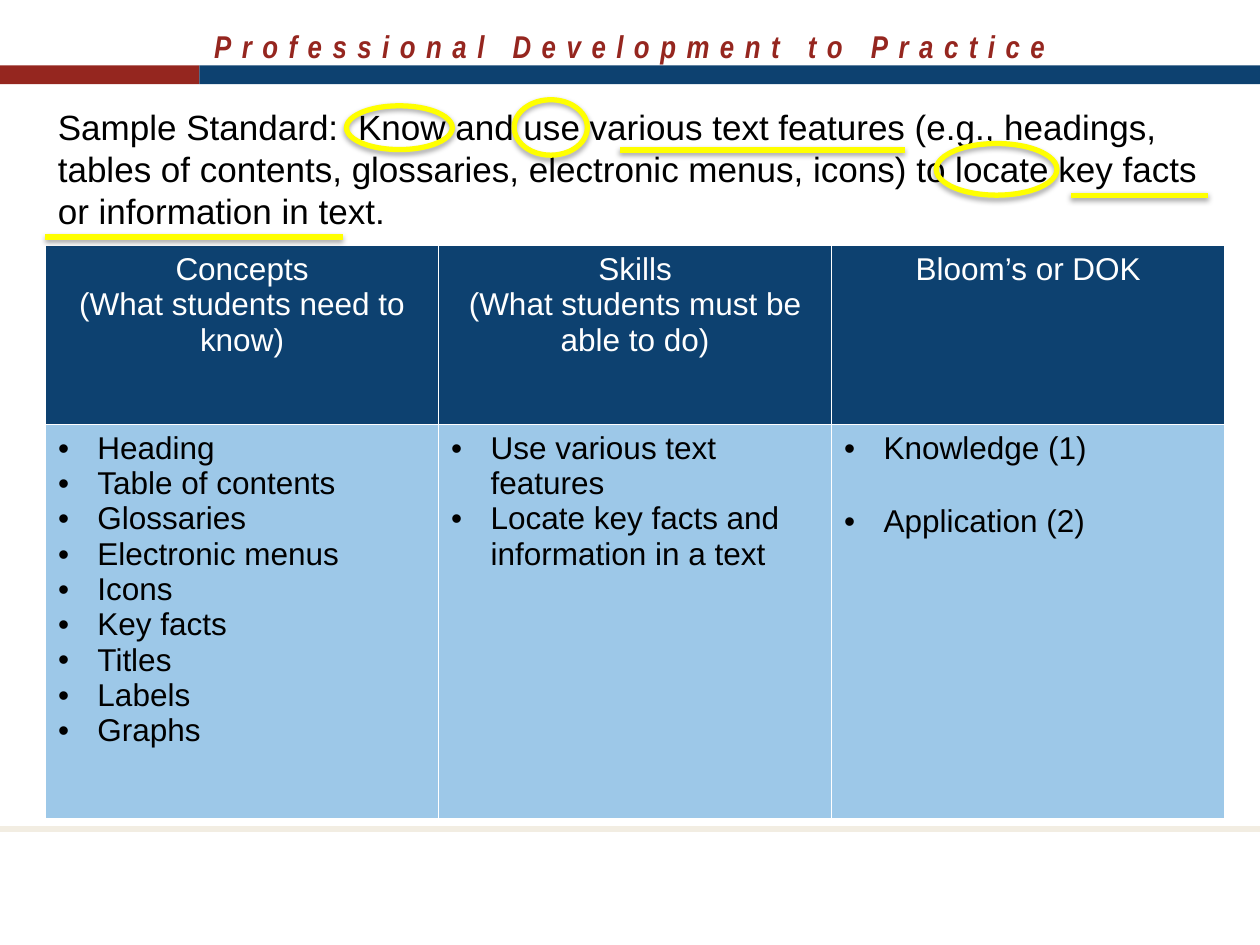
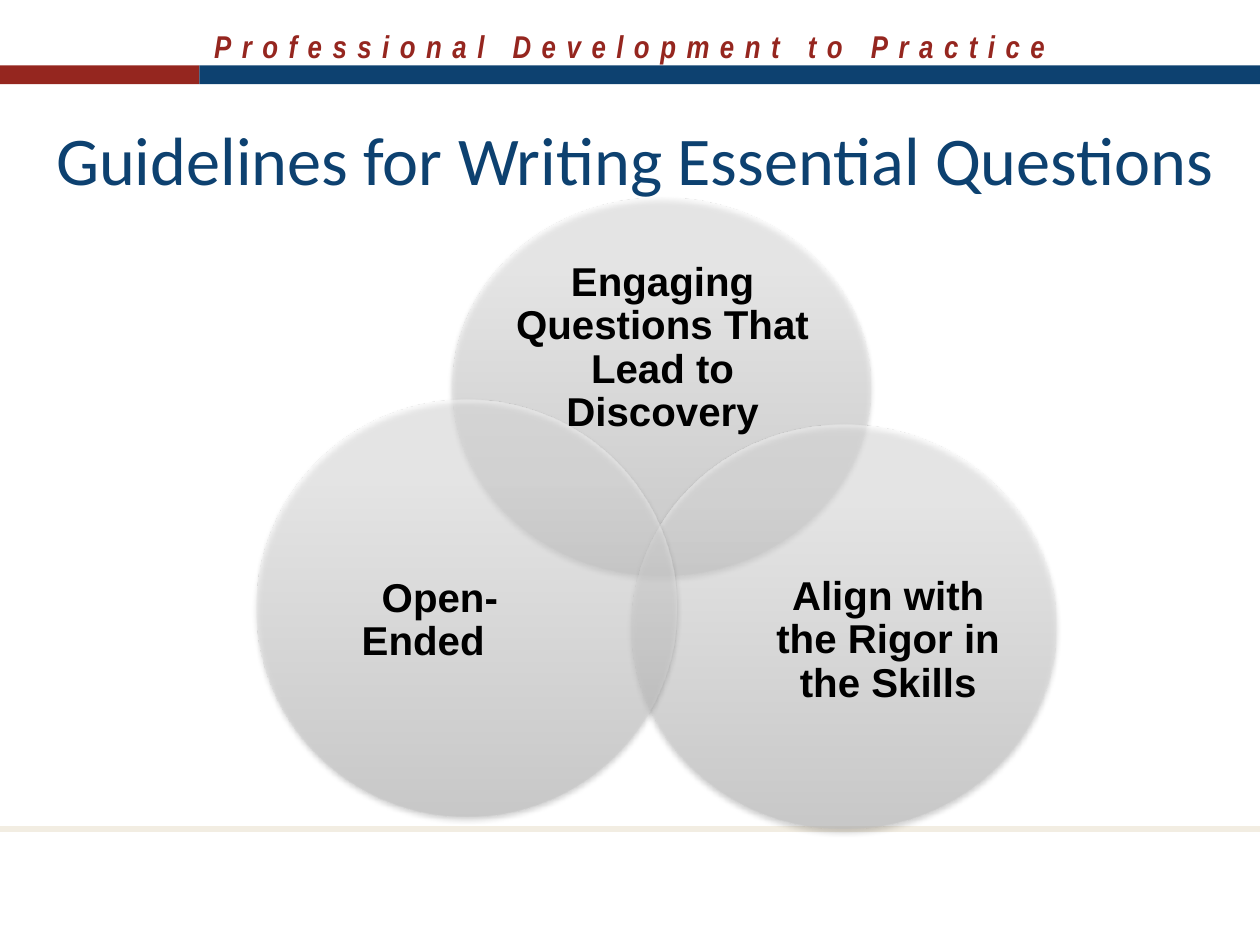
from dataclasses import dataclass
from typing import Any, NamedTuple

from lxml.etree import SubElement
from pptx import Presentation
from pptx.dml.color import RGBColor as Rgb
from pptx.enum.shapes import MSO_CONNECTOR as Link, MSO_SHAPE as Kind
from pptx.enum.text import MSO_ANCHOR as Anchor, MSO_AUTO_SIZE as Fit, PP_ALIGN as Align
from pptx.oxml.ns import qn
from pptx.util import Pt


@dataclass(frozen=True)
class Theme:
    red: str = "95261F"
    navy: str = "0D4170"
    sky: str = "9DC8E8"
    sand: str = "F2EDE2"
    mark: str = "FFFF00"
    white: str = "FFFFFF"
    black: str = "000000"
    sans: str = "Arial"
    narrow: str = "Arial Narrow"
    head: str = "Calibri"
    small: float = 18
    body: float = 20
    label: float = 23
    title: float = 39
    rule: float = 3


class Box(NamedTuple):
    left: float
    top: float
    width: float
    height: float

    def emu(self) -> list[Pt]:
        return [Pt(side) for side in self]


class Disc(NamedTuple):
    text: str
    ring: Box
    area: Box
    indent: float = 0


class Rule(NamedTuple):
    left: float
    right: float
    top: float


class Item(NamedTuple):
    text: str
    gap: float = 0


T = Theme()
WIDE, HIGH = 720, 540
TAB = 22.5
PLAIN = {"name": T.sans, "size": Pt(T.small), "bold": False, "italic": False}
BRAND = PLAIN | {"name": T.narrow, "bold": True, "italic": True}
PROSE = PLAIN | {"size": Pt(T.body)}
LABEL = PLAIN | {"size": Pt(T.label), "bold": True}
TITLE = PLAIN | {"name": T.head, "size": Pt(T.title)}
FLUSH = dict.fromkeys(("margin_left", "margin_right", "margin_top", "margin_bottom"), 0)
GROW = {"word_wrap": True, "auto_size": Fit.SHAPE_TO_FIT_TEXT}
FIXED = {"word_wrap": True, "auto_size": Fit.NONE, "vertical_anchor": Anchor.MIDDLE}

STOPS = [(0, "BEBEBE"), (80, "F7F7F7"), (100, "F8F8F8")]
RINGS = [Box(198, 60.5, 60.5, 25), Box(293.8, 57, 41.8, 31.7), Box(535, 82, 69, 29.5)]
RULES = [Rule(612, 690.5, 111.6), Rule(354.2, 517, 85.7), Rule(26, 195.8, 135.4)]
STANDARD = [
    "Sample Standard:",
    " ",
    "Know and use various text features (e.g., headings, tables of contents, "
    "glossaries, electronic menus, icons) to locate key facts or information in text.",
]
GRID = Box(26, 140.4, 673.9, 327.6)
ROWS = [102.2, 225.4]
HEADS = [
    ["Concepts", "(What students need to know)"],
    ["Skills", "(What students must be able to do)"],
    ["Bloom’s or DOK"],
]
TOPICS = ["Heading", "Table of contents", "Glossaries", "Electronic menus", "Icons",
          "Key facts", "Titles", "Labels", "Graphs"]
LISTS = [
    [Item(topic) for topic in TOPICS],
    [Item("Use various text features"), Item("Locate key facts and information in a text")],
    [Item("Knowledge (1)"), Item("Application (2)", 21.5)],
]
DISCS = [
    Disc("Engaging Questions That Lead to Discovery",
         Box(258.5, 113, 239, 216), Box(290.9, 150.5, 175.7, 97.2)),
    Disc("Align with the Rigor in the Skills",
         Box(360.7, 242.6, 242.6, 231.1), Box(434.9, 302.4, 145.4, 127.4)),
    Disc("Open-Ended",
         Box(146.9, 228.2, 239.8, 238.3), Box(169.9, 289.4, 144, 131), 19),
]


def apply(thing: Any, looks: dict) -> None:
    for name, value in looks.items():
        setattr(thing, name, value)


def style(font: Any, looks: dict, ink: str) -> None:
    apply(font, looks)
    font.color.rgb = Rgb.from_string(ink)


def paint(thing: Any, ink: str) -> None:
    thing.fill.solid()
    thing.fill.fore_color.rgb = Rgb.from_string(ink)


def tint(parent: Any, ink: str, alpha: float = 100) -> None:
    """Add an XML colour with an opacity in percent."""
    node = SubElement(parent, qn("a:srgbClr"), val=ink)
    if alpha < 100:
        SubElement(node, qn("a:alpha"), val=str(round(alpha * 1000)))


def shade(shape: Any, alpha: float = 0, drop: float = 1.8) -> None:
    """Replace the theme shadow by a soft one below, or by none."""
    node = SubElement(shape._element.spPr, qn("a:effectLst"))
    if alpha:
        cast = SubElement(node, qn("a:outerShdw"), blurRad=str(Pt(3.1)),
                          dist=str(Pt(drop)), dir="5400000", rotWithShape="0")
        tint(cast, T.black, alpha)


def stroke(shape: Any, ink: str) -> None:
    shape.line.color.rgb = Rgb.from_string(ink)
    shape.line.width = Pt(T.rule)


def draw_rule(slide: Any, rule: Rule, ink: str, alpha: float = 0) -> None:
    ends = [Pt(n) for n in (rule.left, rule.top, rule.right, rule.top)]
    line = slide.shapes.add_connector(Link.STRAIGHT, *ends)
    stroke(line, ink)
    shade(line, alpha, 1.6)


def add_text(slide: Any, box: Box, frame: dict, parts: list[str], looks: dict,
             ink: str, align: Align = Align.LEFT) -> Any:
    """Add a one-paragraph text box with one run per part."""
    text = slide.shapes.add_textbox(*box.emu()).text_frame
    apply(text, frame)
    para = text.paragraphs[0]
    para.alignment = align
    for part in parts:
        run = para.add_run()
        run.text = part
        style(run.font, looks, ink)
    return para


def space(run: Any, gap: float) -> None:
    """Set the letter spacing of a run in points."""
    run._r.get_or_add_rPr().set("spc", str(round(gap * 100)))


def draw_frame(slide: Any) -> None:
    """Draw the banner, bands and bottom rule that all slides share."""
    banner = add_text(slide, Box(0, 12.2, WIDE, 28.8), GROW,
                      ["Professional Development to Practice"], BRAND, T.red, Align.CENTER)
    space(banner.runs[0], 6)
    split = 114
    for left, width, ink in ((0, split, T.red), (split, WIDE - split, T.navy)):
        band = slide.shapes.add_shape(Kind.RECTANGLE, *Box(left, 37.3, width, 10.8).emu())
        paint(band, ink)
        band.line.fill.background()
        shade(band)
    draw_rule(slide, Rule(0, WIDE, 473.8), T.sand)


def edge(cell: Any) -> None:
    """Give a cell thin white borders."""
    props = cell._tc.get_or_add_tcPr()
    for spot, side in enumerate(("lnL", "lnR", "lnT", "lnB")):
        line = SubElement(props, qn(f"a:{side}"), w=str(Pt(1)))
        tint(SubElement(line, qn("a:solidFill")), T.white)
        props.insert(spot, line)


def fill_cell(cell: Any, items: list[Item], back: str, ink: str, dots: bool) -> None:
    paint(cell, back)
    edge(cell)
    text = cell.text_frame
    for spot, item in enumerate(items):
        para = text.add_paragraph() if spot else text.paragraphs[0]
        para.alignment = Align.LEFT if dots else Align.CENTER
        if item.gap:
            para.space_before = Pt(item.gap)
        if dots:
            props = para._p.get_or_add_pPr()
            props.set("marL", str(Pt(TAB)))
            props.set("indent", str(-Pt(TAB)))
            SubElement(props, qn("a:buFont"), typeface=T.sans)
            SubElement(props, qn("a:buChar"), char="•")
        run = para.add_run()
        run.text = item.text
        style(run.font, PLAIN, ink)


def draw_grid(slide: Any) -> None:
    table = slide.shapes.add_table(len(ROWS), len(HEADS), *GRID.emu()).table
    apply(table, {"first_row": False, "horz_banding": False})
    for row, height in zip(table.rows, ROWS):
        row.height = Pt(height)
    for col, (head, items) in enumerate(zip(HEADS, LISTS)):
        table.columns[col].width = Pt(GRID.width / len(HEADS))
        fill_cell(table.cell(0, col), [Item(text) for text in head], T.navy, T.white, False)
        fill_cell(table.cell(1, col), items, T.sky, T.black, True)


def draw_disc(slide: Any, disc: Disc) -> None:
    ring = slide.shapes.add_shape(Kind.OVAL, *disc.ring.emu())
    ring.line.fill.background()
    ring.fill.gradient()
    grad = ring._element.spPr.find(qn("a:gradFill"))
    stops = grad.find(qn("a:gsLst"))
    for stop in list(stops):
        stops.remove(stop)
    for place, ink in STOPS:
        tint(SubElement(stops, qn("a:gs"), pos=str(place * 1000)), ink, 50)
    grad.find(qn("a:lin")).set("ang", "16200000")
    shade(ring, 35)
    para = add_text(slide, disc.area, FIXED | FLUSH, [disc.text], LABEL, T.black, Align.CENTER)
    para.line_spacing = 0.9
    if disc.indent:
        para._p.get_or_add_pPr().set("indent", str(Pt(disc.indent)))


def build_sample(deck: Any) -> None:
    slide = deck.slides.add_slide(deck.slide_layouts[6])
    draw_frame(slide)
    draw_grid(slide)
    para = add_text(slide, Box(26, 56.9, 673.9, 79.9), GROW, STANDARD, PROSE, T.black)
    space(para.runs[1], 5.56)
    for box in RINGS:
        ring = slide.shapes.add_shape(Kind.OVAL, *box.emu())
        ring.fill.background()
        stroke(ring, T.mark)
        shade(ring, 35)
    for rule in RULES:
        draw_rule(slide, rule, T.mark, 38)


def build_guide(deck: Any) -> None:
    slide = deck.slides.add_slide(deck.slide_layouts[5])
    draw_frame(slide)
    title = slide.shapes.title
    sides = zip(("left", "top", "width", "height"), Box(18, 48.2, 689.8, 84.2).emu())
    apply(title, dict(sides))
    title.text = "Guidelines for Writing Essential Questions"
    apply(title.text_frame, FIXED)
    para = title.text_frame.paragraphs[0]
    para.alignment = Align.CENTER
    style(para.runs[0].font, TITLE, T.navy)
    for disc in DISCS:
        draw_disc(slide, disc)


def main() -> None:
    deck = Presentation()
    apply(deck, {"slide_width": Pt(WIDE), "slide_height": Pt(HIGH)})
    build_sample(deck)
    build_guide(deck)
    deck.save("out.pptx")


if __name__ == "__main__":
    main()
